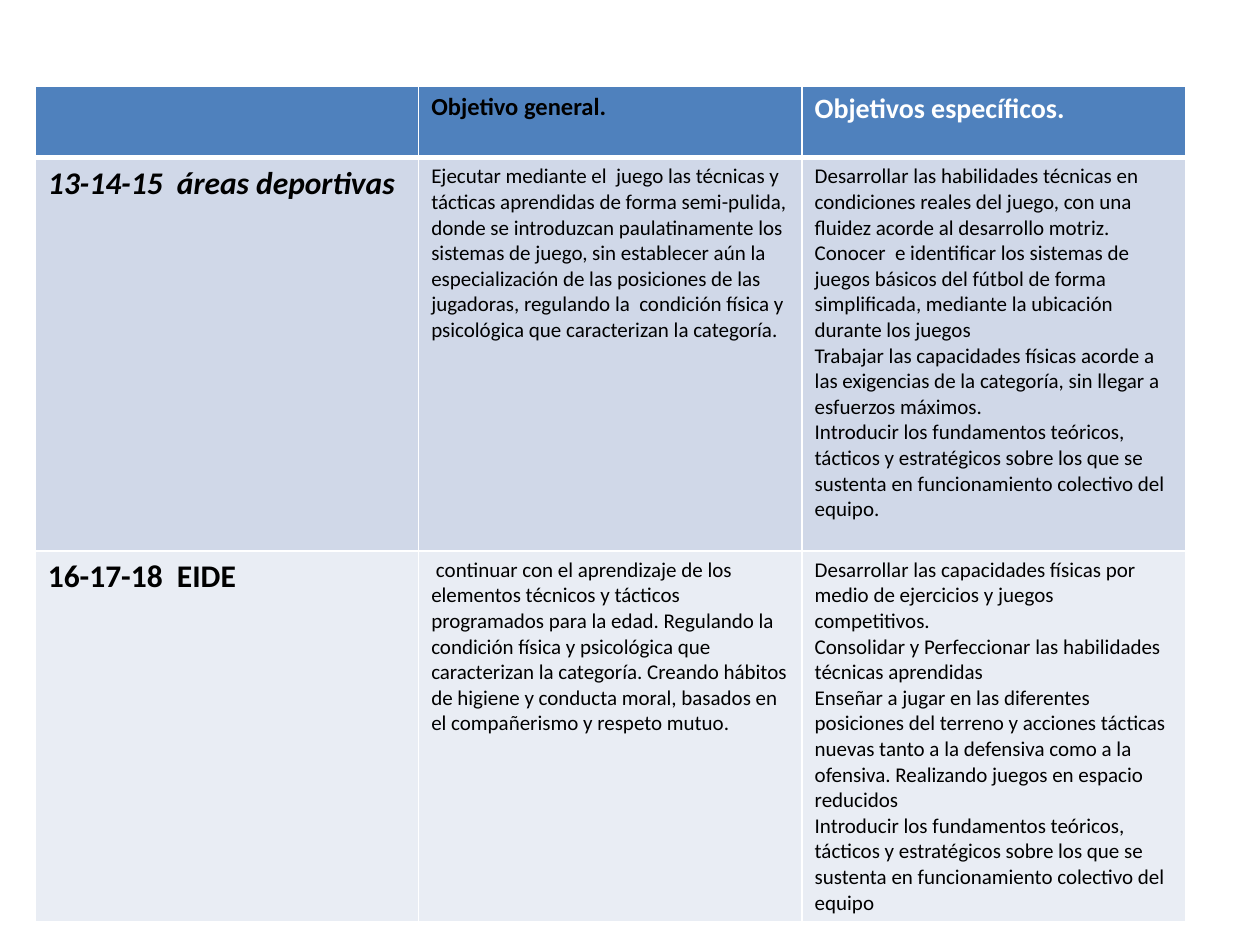
"""Build a slide with a table of football training objectives by age group."""
from lxml.etree import SubElement
from pptx import Presentation
from pptx.dml.color import RGBColor
from pptx.oxml.ns import qn
from pptx.util import Cm, Pt

BLACK = RGBColor(0x00, 0x00, 0x00)
WHITE = RGBColor(0xFF, 0xFF, 0xFF)
HEADER_BLUE = RGBColor(0x4F, 0x81, 0xBD)
BAND_DARK = RGBColor(0xD0, 0xD8, 0xE8)
BAND_LIGHT = RGBColor(0xE9, 0xED, 0xF4)

FONT = "Calibri"
LEFT, TOP = 0.71, 1.73
COLUMN_WIDTH = 7.73
ROW_HEIGHTS = [1.45, 7.93, 7.47]
ROW_FILLS = [HEADER_BLUE, BAND_DARK, BAND_LIGHT]

ROWS = [
    [[], ["Objetivo general."], ["Objetivos específicos."]],
    [
        ["13-14-15  áreas deportivas"],
        ["Ejecutar mediante el  juego las técnicas y tácticas aprendidas de forma "
         "semi-pulida, donde se introduzcan paulatinamente los sistemas de juego, sin "
         "establecer aún la especialización de las posiciones de las jugadoras, regulando "
         "la  condición física y psicológica que caracterizan la categoría."],
        ["Desarrollar las habilidades técnicas en condiciones reales del juego, con una "
         "fluidez acorde al desarrollo motriz.",
         "Conocer  e identificar los sistemas de juegos básicos del fútbol de forma "
         "simplificada, mediante la ubicación durante los juegos",
         "Trabajar las capacidades físicas acorde a las exigencias de la categoría, sin "
         "llegar a esfuerzos máximos.",
         "Introducir los fundamentos teóricos, tácticos y estratégicos sobre los que se "
         "sustenta en funcionamiento colectivo del equipo."],
    ],
    [
        ["16-17-18  EIDE"],
        [" continuar con el aprendizaje de los elementos técnicos y tácticos programados "
         "para la edad. Regulando la  condición física y psicológica que caracterizan la "
         "categoría. Creando hábitos de higiene y conducta moral, basados en el "
         "compañerismo y respeto mutuo."],
        ["Desarrollar las capacidades físicas por medio de ejercicios y juegos "
         "competitivos.",
         "Consolidar y Perfeccionar las habilidades técnicas aprendidas",
         "Enseñar a jugar en las diferentes posiciones del terreno y acciones tácticas "
         "nuevas tanto a la defensiva como a la ofensiva. Realizando juegos en espacio "
         "reducidos",
         "Introducir los fundamentos teóricos, tácticos y estratégicos sobre los que se "
         "sustenta en funcionamiento colectivo del equipo"],
    ],
]

BODY_STYLE = (12, False, False, BLACK)
CELL_STYLES = {
    (0, 1): (14, True, False, BLACK),
    (0, 2): (16, True, False, WHITE),
    (1, 0): (18, True, True, BLACK),
    (2, 0): (18, True, False, BLACK),
}


def set_borders(cell, widths):
    """Draw white cell borders with the given width in points for each side."""
    properties = cell._tc.get_or_add_tcPr()
    for side, width in widths.items():
        line = SubElement(properties, qn(f"a:ln{side}"), w=str(Pt(width)))
        fill = SubElement(line, qn("a:solidFill"))
        SubElement(fill, qn("a:srgbClr"), val=str(WHITE))


def fill_cell(cell, paragraphs, style):
    """Write the paragraphs into the cell and format their runs."""
    size, bold, italic, color = style
    cell.text_frame.text = "\n".join(paragraphs)
    for paragraph in cell.text_frame.paragraphs:
        for run in paragraph.runs:
            font = run.font
            font.name, font.size = FONT, Pt(size)
            font.bold, font.italic = bold, italic
            font.color.rgb = color


def main():
    """Create the presentation and save it."""
    presentation = Presentation()
    presentation.slide_width, presentation.slide_height = Cm(25.4), Cm(19.05)
    slide = presentation.slides.add_slide(presentation.slide_layouts[6])
    column_count = len(ROWS[0])
    table = slide.shapes.add_table(
        len(ROWS), column_count, Cm(LEFT), Cm(TOP),
        Cm(COLUMN_WIDTH * column_count), Cm(sum(ROW_HEIGHTS)),
    ).table
    for column in table.columns:
        column.width = Cm(COLUMN_WIDTH)
    for row_index, row in enumerate(ROWS):
        table.rows[row_index].height = Cm(ROW_HEIGHTS[row_index])
        top_width = 3 if row_index == 1 else 1
        bottom_width = 3 if row_index == 0 else 1
        for column_index, paragraphs in enumerate(row):
            cell = table.cell(row_index, column_index)
            set_borders(cell, {"L": 1, "R": 1, "T": top_width, "B": bottom_width})
            cell.fill.solid()
            cell.fill.fore_color.rgb = ROW_FILLS[row_index]
            style = CELL_STYLES.get((row_index, column_index), BODY_STYLE)
            fill_cell(cell, paragraphs, style)
    presentation.save("out.pptx")


if __name__ == "__main__":
    main()
